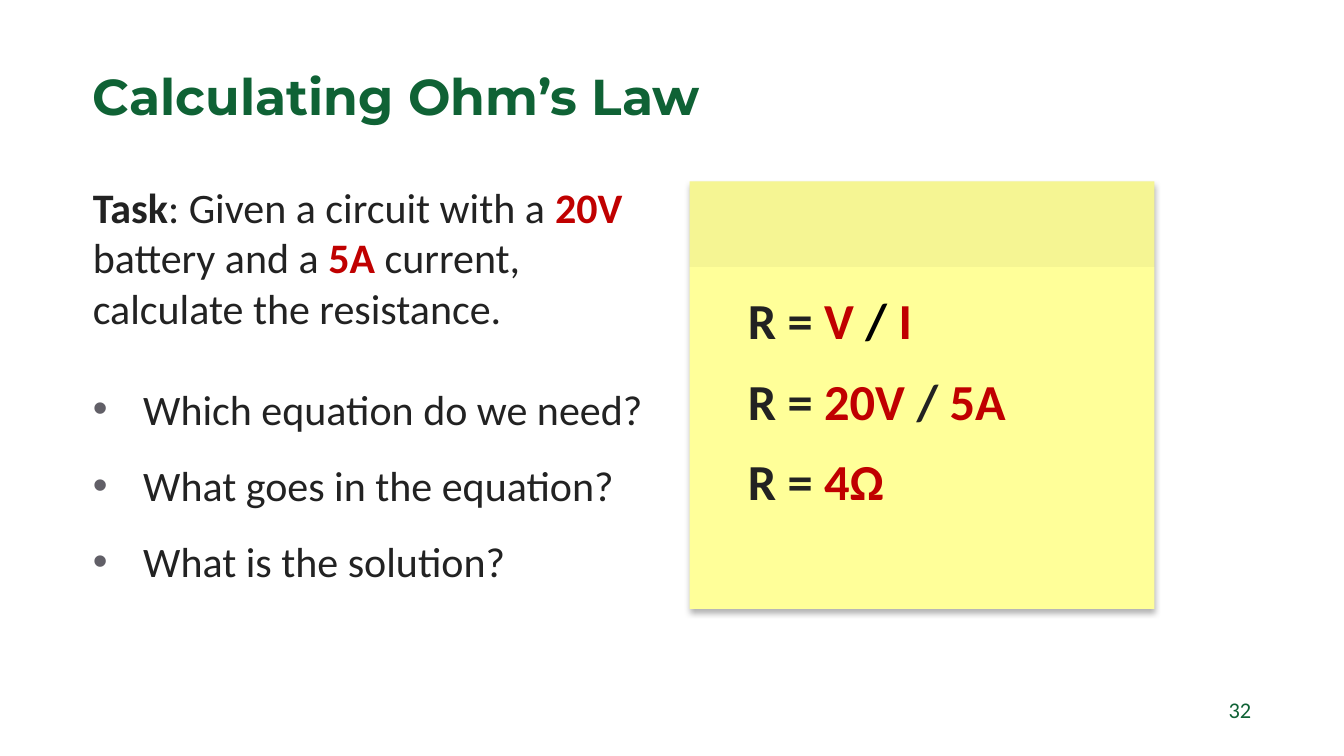
import pptx
import pptx.dml.color
import pptx.enum.shapes
import pptx.enum.text
import pptx.oxml
import pptx.oxml.ns
import pptx.util

COLORS = {
    "green": "0F6235",
    "text": "222222",
    "red": "C00000",
    "black": "000000",
    "bullet": "615F67",
    "note": "FFFF99",
}
WIDTH, HEIGHT = 13.33, 7.5
MARGIN = 0.92
CONTENT_WIDTH = WIDTH - 2 * MARGIN
CONTENT_TOP = 1.8
NOTE_LEFT, NOTE_WIDTH, NOTE_HEIGHT = 6.84, 4.61, 4.24
EQUATION_LEFT, EQUATION_TOP, EQUATION_PITCH = 7.32, 2.82, 0.8

TITLE = {"name": "Montserrat", "size": 36, "bold": True, "color": "green"}
BODY = {"name": "Calibri", "size": 30, "bold": False, "color": "text"}
EQUATION = {**BODY, "size": 36, "bold": True}
NUMBER = {**BODY, "size": 16, "color": "green"}
STRONG = {"bold": True}
VALUE = {"bold": True, "color": "red"}

TASK = [
    ("Task", STRONG), (": Given a circuit with a ", {}), ("20V", VALUE),
    (" battery and a ", {}), ("5A", VALUE),
    (" current, calculate the resistance.", {}),
]
QUESTIONS = [
    "Which equation do we need?",
    "What goes in the equation?",
    "What is the solution?",
]
EQUATIONS = [
    [("R = ", {}), ("V ", VALUE), ("/", {"color": "black"}), (" I", VALUE)],
    [("R = ", {}), ("20V ", VALUE), ("/ ", {}), ("5A", VALUE)],
    [("R = ", {}), ("4Ω", VALUE)],
]


def rgb(name):
    return pptx.dml.color.RGBColor.from_string(COLORS[name])


def inches(*lengths):
    return [pptx.util.Inches(length) for length in lengths]


def place(shape, *box):
    for side, length in zip(("left", "top", "width", "height"), inches(*box)):
        setattr(shape, side, length)


def set_frame(shape, margin=0):
    """Prepare a wrapping, top-anchored text frame and return it."""
    frame = shape.text_frame
    settings = {
        "word_wrap": True,
        "auto_size": pptx.enum.text.MSO_AUTO_SIZE.NONE,
        "vertical_anchor": pptx.enum.text.MSO_ANCHOR.TOP,
    }
    for side, share in {"left": 2, "right": 2, "top": 1, "bottom": 1}.items():
        settings[f"margin_{side}"] = pptx.util.Inches(margin * share)
    for name, value in settings.items():
        setattr(frame, name, value)
    return frame


def write(paragraph, parts, base, **layout):
    """Fill a paragraph with (text, changes) parts on a base format."""
    layout = {"alignment": pptx.enum.text.PP_ALIGN.LEFT,
              "space_before": pptx.util.Pt(0), **layout}
    for name, value in layout.items():
        setattr(paragraph, name, value)
    for text, changes in parts:
        run = paragraph.add_run()
        run.text = text
        values = {**base, **changes}
        run.font.color.rgb = rgb(values.pop("color"))
        values["size"] = pptx.util.Pt(values["size"])
        for name, value in values.items():
            setattr(run.font, name, value)


def add_element(parent, xml):
    namespace = pptx.oxml.ns.nsdecls("a")
    tag, rest = xml.split(" ", 1)
    parent.append(pptx.oxml.parse_xml(f"{tag} {namespace} {rest}"))


def set_bullet(paragraph, indent=0.0):
    """Give a hanging bullet, or none when there is no indent."""
    properties = paragraph._p.get_or_add_pPr()
    hang = pptx.util.Inches(indent)
    properties.set("marL", str(hang))
    properties.set("indent", str(-hang))
    if not indent:
        add_element(properties, "<a:buNone />")
        return
    add_element(properties, f'<a:buClr ><a:srgbClr val="{COLORS["bullet"]}"/></a:buClr>')
    add_element(properties, '<a:buFont typeface="Arial"/>')
    add_element(properties, '<a:buChar char="•"/>')


def add_text(slide, box, parts, base, margin=0, **layout):
    shape = slide.shapes.add_textbox(*inches(*box))
    write(set_frame(shape, margin).paragraphs[0], parts, base, **layout)


def add_panel(group, box, color):
    kind = pptx.enum.shapes.MSO_SHAPE.RECTANGLE
    shape = group.shapes.add_shape(kind, *inches(*box))
    shape.shadow.inherit = False
    shape.fill.solid()
    shape.fill.fore_color.rgb = rgb(color)
    shape.line.fill.background()
    return shape


def add_note(slide):
    """Draw the sticky note with its soft shadow and darker top strip."""
    group = slide.shapes.add_group_shape()
    sheet = add_panel(group, (NOTE_LEFT, CONTENT_TOP, NOTE_WIDTH, NOTE_HEIGHT), "note")
    effects = sheet._element.spPr.find(pptx.oxml.ns.qn("a:effectLst"))
    blur, distance = pptx.util.Pt(4), pptx.util.Pt(3)
    add_element(effects, f'<a:outerShdw blurRad="{blur}" dist="{distance}" dir="5400000">'
                f'<a:srgbClr val="{COLORS["black"]}"><a:alpha val="29000"/></a:srgbClr>'
                '</a:outerShdw>')
    strip = add_panel(group, (NOTE_LEFT, CONTENT_TOP, NOTE_WIDTH, NOTE_HEIGHT / 5), "black")
    color = strip._element.spPr.find(".//" + pptx.oxml.ns.qn("a:srgbClr"))
    add_element(color, '<a:alpha val="4000"/>')


def fill_body(body):
    """Write the task, then the questions as a bulleted list."""
    place(body, MARGIN, CONTENT_TOP, CONTENT_WIDTH / 2, 5)
    frame = set_frame(body)
    task = frame.paragraphs[0]
    set_bullet(task)
    write(task, TASK, BODY)
    for index, question in enumerate(QUESTIONS):
        paragraph = frame.add_paragraph()
        set_bullet(paragraph, 0.5)
        gap = pptx.util.Pt(18.5 if index else 36)
        write(paragraph, [(question, {})], BODY, space_before=gap)


def main():
    presentation = pptx.Presentation()
    presentation.slide_width, presentation.slide_height = inches(WIDTH, HEIGHT)
    slide = presentation.slides.add_slide(presentation.slide_layouts[1])

    # Title and task
    title = slide.shapes.title
    place(title, MARGIN, 0.71, CONTENT_WIDTH, 0.73)
    write(set_frame(title).paragraphs[0], [("Calculating Ohm’s Law", {})], TITLE,
          line_spacing=0.9)
    fill_body(slide.placeholders[1])

    # Note with the worked equations
    add_note(slide)
    for row, parts in enumerate(EQUATIONS):
        top = EQUATION_TOP + row * EQUATION_PITCH
        add_text(slide, (EQUATION_LEFT, top, 4.04, 0.71), parts, EQUATION, margin=0.05)

    # Slide number
    add_text(slide, (MARGIN, 6.91, CONTENT_WIDTH, 0.4), [("32", {})], NUMBER,
             alignment=pptx.enum.text.PP_ALIGN.RIGHT)

    presentation.save("out.pptx")


if __name__ == "__main__":
    main()
